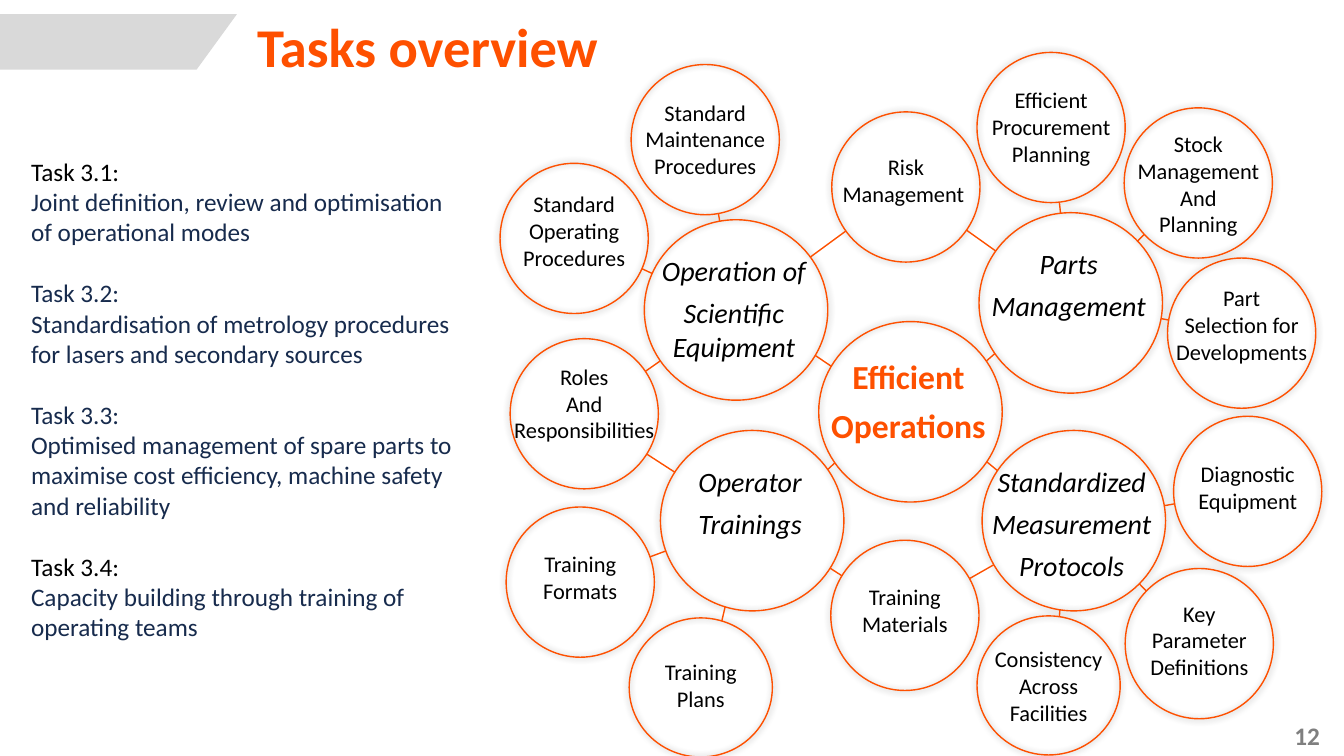
from math import hypot

from lxml import etree
from pptx import Presentation
from pptx.dml.color import RGBColor
from pptx.enum.shapes import MSO_CONNECTOR as CONN, MSO_SHAPE as SHAPE
from pptx.enum.text import MSO_ANCHOR as ANCHOR, PP_ALIGN as ALIGN
from pptx.oxml.ns import qn
from pptx.util import Inches, Pt

FONT = "Calibri"
COLORS = {
    "orange": "FE5000",
    "link": "FD5000",
    "black": "000000",
    "navy": "172B4D",
    "band": "D9D9D9",
    "number": "7F7F7F",
}

HUB_SIZE, LEAF_SIZE, SMALL_SIZE = (1.82, 1.79), (1.47, 1.49), (1.42, 1.38)

HUBS = {
    "core": (8.12, 3.19, ["Efficient", "Operations"]),
    "equipment": (6.39, 2.18, ["Operation of", "Scientific Equipment"]),
    "parts": (9.71, 2.11, ["Parts", "Management"]),
    "protocols": (9.74, 4.27, ["Standardized", "Measurement", "Protocols"]),
    "trainings": (6.55, 4.27, ["Operator", "Trainings"]),
}

LEAVES = [
    (4.96, 1.62, LEAF_SIZE, 1.84, 1.23, ["Standard", "Operating", "Procedures"], ["equipment"]),
    (8.25, 1.11, LEAF_SIZE, 1.47, 1.47, ["Risk", "Management "], ["equipment", "parts"]),
    (6.26, 0.64, LEAF_SIZE, 0.93, 1.4, ["Standard", "Maintenance", "Procedures"], ["equipment"]),
    (5.06, 3.36, LEAF_SIZE, 3.55, 1.61, ["Roles", "And", "Responsibilities"],
     ["equipment", "trainings"]),
    (11.58, 2.56, LEAF_SIZE, 2.77, 1.52, ["Part", "Selection for", "Developments"], ["parts"]),
    (9.69, 0.52, LEAF_SIZE, 0.81, 1.39, ["Efficient", "Procurement", "Planning"], ["parts"]),
    (11.15, 1.07, LEAF_SIZE, 1.24, 1.42, ["Stock", "Management", "And", "Planning"], ["parts"]),
    (5.02, 5.03, LEAF_SIZE, 5.41, 0.95, ["Training", "Formats"], ["trainings"]),
    (8.24, 5.36, LEAF_SIZE, 5.74, 1.06, ["Training", "Materials"], ["trainings", "protocols"]),
    (6.24, 6.13, SMALL_SIZE, 6.48, 0.92, ["Training", "Plans"], ["trainings"]),
    (11.16, 5.64, LEAF_SIZE, 5.9, 1.19, ["Key", "Parameter", "Definitions"], ["protocols"]),
    (11.64, 4.13, LEAF_SIZE, 4.52, 1.19, ["Diagnostic", "Equipment"], ["protocols"]),
    (9.69, 6.11, SMALL_SIZE, 6.35, 1.28, ["Consistency", "Across", "Facilities"], ["protocols"]),
]

TASKS = [
    ("Task 3.1:", "black", ["Joint definition, review and optimisation", "of operational modes"]),
    ("Task 3.2:", "navy", ["Standardisation of metrology procedures",
                           "for lasers and secondary sources"]),
    ("Task 3.3:", "navy", ["Optimised management of spare parts to",
                           "maximise cost efficiency, machine safety", "and reliability"]),
    ("Task 3.4:", "black", ["Capacity building through training of", "operating teams"]),
]


def rgb(name):
    return RGBColor.from_string(COLORS[name])


def add_run(p, text, size, color, bold=False, italic=False):
    r = p.add_run()
    r.text = text
    r.font.name = FONT
    r.font.size = Pt(size)
    r.font.bold = bold
    r.font.italic = italic
    r.font.color.rgb = rgb(color)


def next_paragraph(tf, space_before=0):
    if not tf.paragraphs[0].runs:
        return tf.paragraphs[0]
    p = tf.add_paragraph()
    p.space_before = Pt(space_before)
    return p


def add_text_frame(shapes, x, y, w, h, wrap):
    tf = shapes.add_textbox(Inches(x), Inches(y), Inches(w), Inches(h)).text_frame
    tf.word_wrap = wrap
    return tf


def add_lines(tf, lines, align, gap, **style):
    for line in lines:
        p = next_paragraph(tf, gap)
        p.alignment = align
        add_run(p, line, **style)


def add_effects(sp):
    return etree.SubElement(sp._element.spPr, qn("a:effectLst"))


def add_circle(shapes, x, y, size):
    w, h = size
    sp = shapes.add_shape(SHAPE.OVAL, Inches(x), Inches(y), Inches(w), Inches(h))
    sp.fill.background()
    sp.line.color.rgb = rgb("orange")
    sp.line.width = Pt(1)
    glow = etree.SubElement(add_effects(sp), qn("a:outerShdw"),
                            blurRad=str(Pt(5)), dist="0", dir="0", rotWithShape="0")
    shade = etree.SubElement(glow, qn("a:srgbClr"), val=COLORS["black"])
    etree.SubElement(shade, qn("a:alpha"), val="40000")
    return x + w / 2, y + h / 2, w / 2, h / 2


def add_hub(slide, x, y, lines, style):
    shapes = slide.shapes.add_group_shape().shapes
    tf = add_text_frame(shapes, x - 0.34, y + 0.29, 2.46, 0.96, True)
    add_lines(tf, lines, ALIGN.CENTER, 6, **style)
    return add_circle(shapes, x, y, HUB_SIZE)


def add_leaf(slide, x, y, size, text_top, text_width, lines):
    shapes = slide.shapes.add_group_shape().shapes
    tf = add_text_frame(shapes, x + (size[0] - text_width) / 2, text_top,
                        text_width, 0.1 + 0.27 * len(lines), False)
    add_lines(tf, lines, ALIGN.CENTER, 0, size=16, color="black")
    return add_circle(shapes, x, y, size)


def add_link(slide, start, end):
    dx, dy = end[0] - start[0], end[1] - start[1]
    dist = hypot(dx, dy)
    ux, uy = dx / dist, dy / dist
    points = (start[0] + ux * start[2], start[1] + uy * start[3],
              end[0] - ux * end[2], end[1] - uy * end[3])
    line = slide.shapes.add_connector(CONN.STRAIGHT, *[Inches(v) for v in points])
    line.line.color.rgb = rgb("link")
    line.line.width = Pt(1)
    add_effects(line)


def add_band(slide):
    top, bottom = Inches(0.14), Inches(0.69)
    outline = slide.shapes.build_freeform(0, top)
    outline.add_line_segments([(Inches(2.35), top), (Inches(1.95), bottom), (0, bottom)])
    sp = outline.convert_to_shape()
    sp.shadow.inherit = False
    sp.fill.solid()
    sp.fill.fore_color.rgb = rgb("band")
    sp.line.fill.background()


def add_title(slide):
    title = slide.shapes.title
    title.left, title.top = Inches(2.45), Inches(0.15)
    title.width, title.height = Inches(9.92), Inches(0.56)
    tf = title.text_frame
    tf.vertical_anchor = ANCHOR.TOP
    p = tf.paragraphs[0]
    p.alignment = ALIGN.LEFT
    p.line_spacing = 0.9
    add_run(p, "Tasks overview", 39, "orange", bold=True)


def add_tasks(slide):
    tf = add_text_frame(slide.shapes, 0.21, 1.5, 4.48, 4.95, False)
    for heading, color, lines in TASKS:
        add_run(next_paragraph(tf, 22), heading, 18, color)
        add_lines(tf, lines, ALIGN.LEFT, 0, size=18, color="navy")


def add_mind_map(slide):
    hub_style = dict(size=20, color="black", italic=True)
    core_style = dict(size=24, color="orange", bold=True)
    rings = {}
    for name, (x, y, lines) in HUBS.items():
        rings[name] = add_hub(slide, x, y, lines, core_style if name == "core" else hub_style)
    links = [(ring, rings["core"]) for name, ring in rings.items() if name != "core"]
    for *leaf, hubs in LEAVES:
        ring = add_leaf(slide, *leaf)
        links += [(ring, rings[hub]) for hub in hubs]
    for start, end in links:
        add_link(slide, start, end)


def main():
    prs = Presentation()
    prs.slide_width, prs.slide_height = Inches(13.33), Inches(7.5)
    slide = prs.slides.add_slide(prs.slide_layouts[5])
    add_band(slide)
    add_title(slide)
    add_mind_map(slide)
    add_tasks(slide)
    number = add_text_frame(slide.shapes, 12, 7.1, 1.19, 0.4, True)
    add_lines(number, ["12"], ALIGN.RIGHT, 0, size=18, color="number", bold=True)
    prs.save("out.pptx")


if __name__ == "__main__":
    main()
